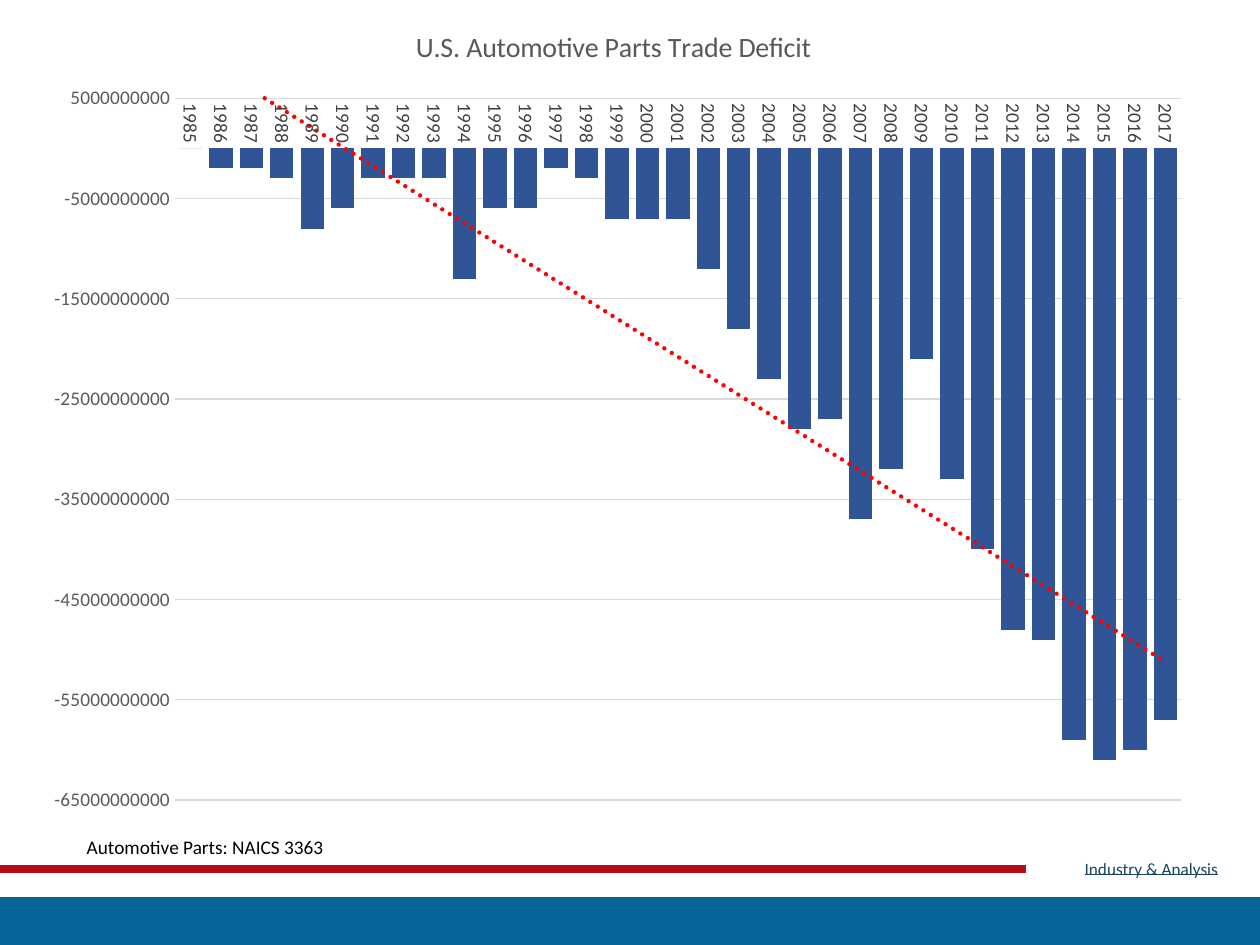
import pptx
import pptx.chart.data
import pptx.dml.color
import pptx.enum.chart
import pptx.enum.shapes
import pptx.enum.text
import pptx.oxml
import pptx.oxml.ns
import pptx.util
from pptx.util import Inches

RGBColor = pptx.dml.color.RGBColor
BAND_BLUE = RGBColor(0x06, 0x66, 0x99)
RULE_RED = RGBColor(0xB9, 0x0B, 0x18)
LINK_BLUE = RGBColor(0x1B, 0x46, 0x60)
BAR_BLUE = RGBColor(0x2F, 0x55, 0x97)
TREND_RED = RGBColor(0xFF, 0x00, 0x00)
GRID_GRAY = RGBColor(0xD9, 0xD9, 0xD9)
AXIS_GRAY = RGBColor(0x59, 0x59, 0x59)
LABEL_GRAY = RGBColor(0x40, 0x40, 0x40)
BLACK = RGBColor(0, 0, 0)
WHITE = RGBColor(0xFF, 0xFF, 0xFF)
FONT = "Calibri"
BILLION = 1_000_000_000
CHART_WIDTH, CHART_HEIGHT = 9.31, 6.58
YEARS = [str(year) for year in range(1985, 2018)]
BALANCES = [
    0, -2, -2, -3, -8, -6, -3, -3, -3, -13, -6,
    -6, -2, -3, -7, -7, -7, -12, -18, -23, -28, -27,
    -37, -32, -21, -33, -40, -48, -49, -59, -61, -60, -57,
]


def parse_chart_xml(tag, body):
    """Return a chart element built from its tag and inner XML."""
    ns = pptx.oxml.ns.nsdecls("c", "a")
    return pptx.oxml.parse_xml(f"<c:{tag} {ns}>{body}</c:{tag}>")


def set_font(font, size, color):
    """Set the face, size and colour of a font."""
    font.name = FONT
    font.size = pptx.util.Pt(size)
    font.bold = False
    font.color.rgb = color


def add_band(slide, x, y, w, h, color):
    """Add a plain filled rectangle."""
    sp = slide.shapes.add_shape(
        pptx.enum.shapes.MSO_SHAPE.RECTANGLE, Inches(x), Inches(y), Inches(w), Inches(h))
    sp.shadow.inherit = False
    sp.fill.solid()
    sp.fill.fore_color.rgb = color
    sp.line.fill.background()


def add_rule(slide, x1, x2, y, color, width):
    """Add a horizontal line without a shadow."""
    line = slide.shapes.add_connector(
        pptx.enum.shapes.MSO_CONNECTOR.STRAIGHT, Inches(x1), Inches(y), Inches(x2), Inches(y))
    line.line.color.rgb = color
    line.line.width = pptx.util.Pt(width)
    line._element.spPr.append(pptx.oxml.parse_xml(
        f"<a:effectLst {pptx.oxml.ns.nsdecls('a')}/>"))


def add_text(slide, x, y, w, h, text, size, color):
    """Add a one-line text box."""
    tf = slide.shapes.add_textbox(Inches(x), Inches(y), Inches(w), Inches(h)).text_frame
    tf.word_wrap = True
    tf.vertical_anchor = pptx.enum.text.MSO_ANCHOR.TOP
    p = tf.paragraphs[0]
    p.text = text
    set_font(p.font, size, color)


def style_axes(chart):
    """Hide the category axis and format the value axis."""
    chart.category_axis.visible = False
    axis = chart.value_axis
    axis.maximum_scale = 5 * BILLION
    axis.minimum_scale = -65 * BILLION
    axis.major_unit = 10 * BILLION
    axis.major_tick_mark = pptx.enum.chart.XL_TICK_MARK.NONE
    axis.tick_labels.number_format = "General"
    axis.tick_labels.number_format_is_linked = False
    set_font(axis.tick_labels.font, 11, AXIS_GRAY)
    axis.format.line.fill.background()
    grid = axis.major_gridlines.format.line
    grid.color.rgb = GRID_GRAY
    grid.width = pptx.util.Pt(0.75)


def add_trendline(series):
    """Add a dotted linear trend line to a series."""
    trend = parse_chart_xml(
        "trendline",
        f'<c:spPr><a:ln w="{pptx.util.Pt(2.5)}" cap="rnd"><a:solidFill>'
        f'<a:srgbClr val="{TREND_RED}"/></a:solidFill><a:prstDash val="sysDot"/></a:ln></c:spPr>'
        '<c:trendlineType val="linear"/><c:dispRSqr val="0"/><c:dispEq val="0"/>')
    series._element.find(pptx.oxml.ns.qn("c:cat")).addprevious(trend)


def add_year_labels(series):
    """Label an invisible series with its rotated category names."""
    series.format.fill.background()
    labels = series.data_labels
    labels.show_value = False
    labels.show_category_name = True
    labels.position = pptx.enum.chart.XL_LABEL_POSITION.OUTSIDE_END
    set_font(labels.font, 11, LABEL_GRAY)
    body = labels._element.find(".//" + pptx.oxml.ns.qn("a:bodyPr"))
    body.set("rot", "5400000")
    body.set("vert", "horz")


def set_plot_layout(chart, x, y, w, h):
    """Fix the inner plot area, given in inches within the chart."""
    parts = {"x": x / CHART_WIDTH, "y": y / CHART_HEIGHT,
             "w": w / CHART_WIDTH, "h": h / CHART_HEIGHT}
    sizes = "".join(f'<c:{key} val="{val}"/>' for key, val in parts.items())
    layout = parse_chart_xml(
        "layout",
        '<c:manualLayout><c:layoutTarget val="inner"/><c:xMode val="edge"/>'
        f'<c:yMode val="edge"/>{sizes}</c:manualLayout>')
    area = chart._chartSpace.chart.plotArea
    for old in area.findall(pptx.oxml.ns.qn("c:layout")):
        area.remove(old)
    area.insert(0, layout)


def add_deficit_chart(slide):
    """Add the trade deficit column chart."""
    data = pptx.chart.data.CategoryChartData()
    data.categories = YEARS
    data.add_series("Series 1", [value * BILLION for value in BALANCES])
    data.add_series("Series 2", [0] * len(YEARS))
    chart = slide.shapes.add_chart(
        pptx.enum.chart.XL_CHART_TYPE.COLUMN_CLUSTERED,
        Inches(0.24), Inches(0), Inches(CHART_WIDTH), Inches(CHART_HEIGHT), data).chart
    set_font(chart.font, 10, BLACK)
    chart.has_legend = False
    tf = chart.chart_title.text_frame
    tf.text = "U.S. Automotive Parts Trade Deficit "
    set_font(tf.paragraphs[0].font, 16, AXIS_GRAY)
    chart._chartSpace.chart.addnext(parse_chart_xml(
        "spPr",
        f'<a:solidFill><a:srgbClr val="{WHITE}"/></a:solidFill><a:ln><a:noFill/></a:ln>'))
    style_axes(chart)
    plot = chart.plots[0]
    plot.gap_width = 30
    plot.overlap = 100
    plot.vary_by_categories = False
    balance, years = plot.series
    balance.invert_if_negative = False
    balance.format.fill.solid()
    balance.format.fill.fore_color.rgb = BAR_BLUE
    add_trendline(balance)
    add_year_labels(years)
    set_plot_layout(chart, 1.15, 0.78, 7.98, 5.57)


def main():
    """Build the slide and save it."""
    prs = pptx.Presentation()
    prs.slide_width = Inches(10)
    prs.slide_height = Inches(7.5)
    slide = prs.slides.add_slide(prs.slide_layouts[6])
    add_band(slide, 0, 7.12, 10, 0.38, BAND_BLUE)
    add_rule(slide, -0.02, 8.14, 6.9, RULE_RED, 4.5)
    add_text(slide, 8.51, 6.76, 1.49, 0.27, "Industry & Analysis", 9.8, LINK_BLUE)
    add_rule(slide, 8.61, 9.67, 6.94, LINK_BLUE, 0.5)
    add_deficit_chart(slide)
    add_text(slide, 0.59, 6.58, 2.3, 0.25, "Automotive Parts: NAICS 3363", 11, BLACK)
    prs.save("out.pptx")


if __name__ == "__main__":
    main()
